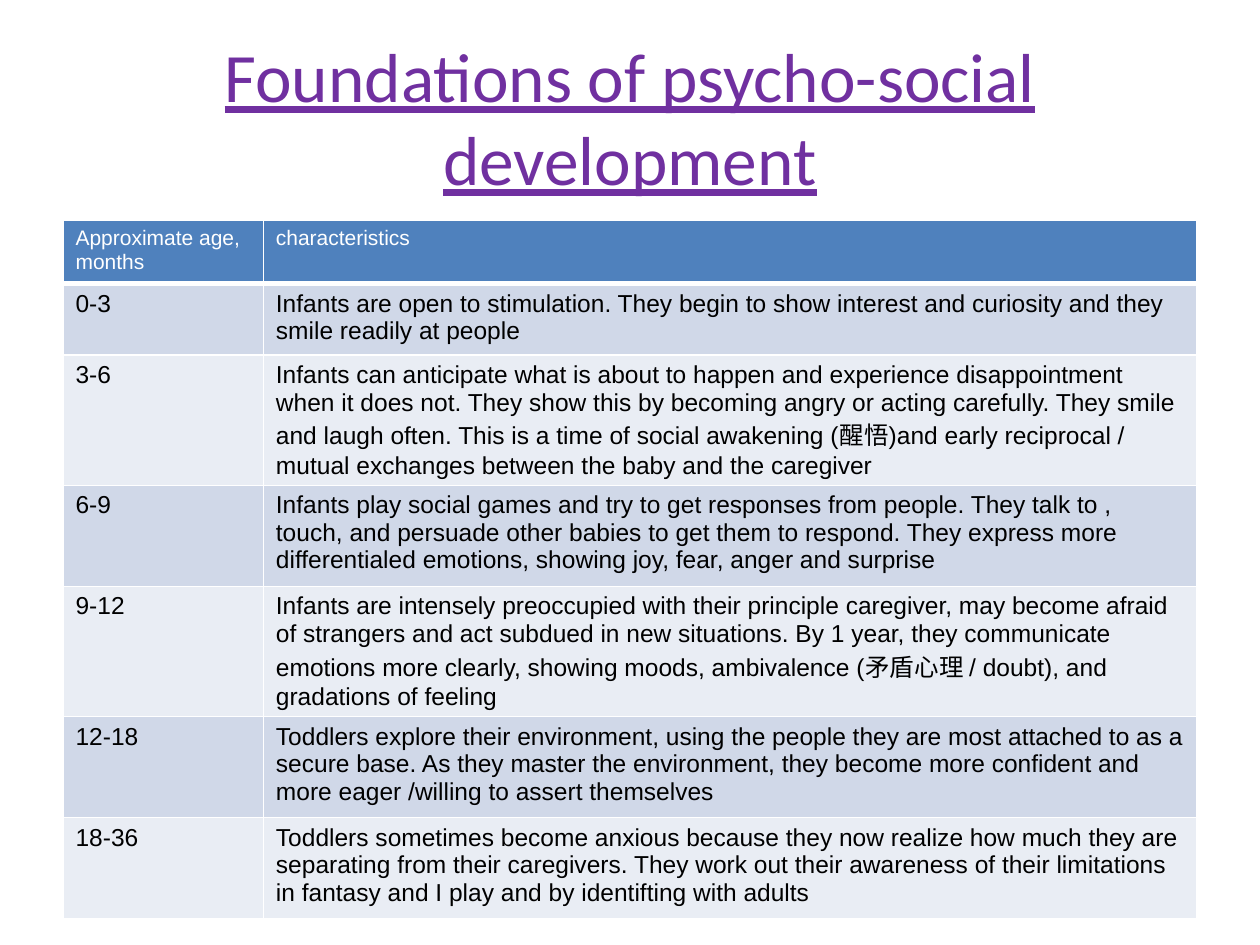
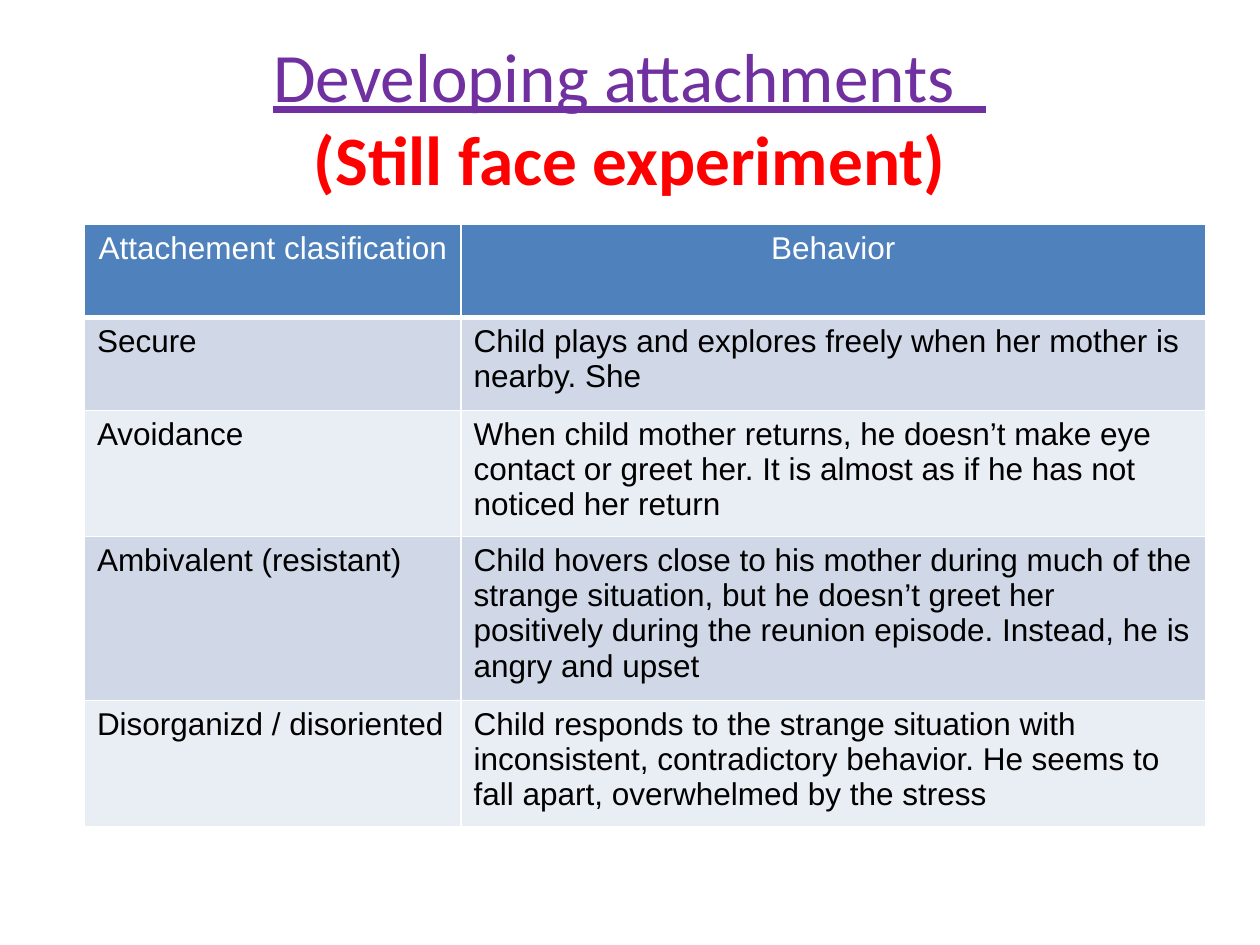
import lxml.etree
import pptx
import pptx.dml.color
import pptx.enum.text
import pptx.oxml.ns
import pptx.util

Pt = pptx.util.Pt
ALIGN = pptx.enum.text.PP_ALIGN

COLORS = {
    "title": "7030A0",
    "accent": "FF0000",
    "header": "4F81BD",
    "band_dark": "D0D8E8",
    "band_light": "E9EDF4",
    "white": "FFFFFF",
    "black": "000000",
}


class Deck:
    """Holds the shared style and the current slide."""

    title_font, title_size = "Calibri", 39.6
    table_font = "Arial"

    def __init__(self):
        self.presentation = pptx.Presentation()
        self.presentation.slide_width = Pt(720)
        self.presentation.slide_height = Pt(540)
        self.slide = None

    def color(self, name):
        return pptx.dml.color.RGBColor.from_string(COLORS[name])

    def add_slide(self):
        self.slide = self.presentation.slides.add_slide(self.presentation.slide_layouts[6])

    def title(self, *lines):
        """Each line is a list of (text, color, bold, underline) runs."""
        box = self.slide.shapes.add_textbox(Pt(36), Pt(21.6), Pt(648), Pt(90))
        frame = box.text_frame
        frame.word_wrap = True
        frame.vertical_anchor = pptx.enum.text.MSO_ANCHOR.MIDDLE
        paragraph = frame.paragraphs[0]
        paragraph.alignment = ALIGN.CENTER
        paragraph.font.name = self.title_font
        paragraph.font.size = Pt(self.title_size)
        for index, line in enumerate(lines):
            if index:
                paragraph.add_line_break()
            for text, color, bold, underline in line:
                run = paragraph.add_run()
                run.text = text
                font = run.font
                font.name, font.size = self.title_font, Pt(self.title_size)
                font.bold, font.underline = bold, underline
                font.color.rgb = self.color(color)

    def border(self, cell, side, width):
        properties = cell._tc.get_or_add_tcPr()
        line = lxml.etree.SubElement(
            properties, pptx.oxml.ns.qn("a:ln" + side), w=str(Pt(width)))
        fill = lxml.etree.SubElement(line, pptx.oxml.ns.qn("a:solidFill"))
        lxml.etree.SubElement(fill, pptx.oxml.ns.qn("a:srgbClr"), val=COLORS["white"])

    def cell(self, cell, text, fill, color, size, alignment, bottom):
        for side, width in (("L", 1), ("R", 1), ("T", 1), ("B", bottom)):
            self.border(cell, side, width)
        cell.fill.solid()
        cell.fill.fore_color.rgb = self.color(fill)
        cell.text = text
        paragraph = cell.text_frame.paragraphs[0]
        paragraph.alignment = alignment
        font = paragraph.runs[0].font
        font.name, font.size, font.bold = self.table_font, Pt(size), False
        font.color.rgb = self.color(color)

    def table(self, left, top, widths, row_height, rows, header_size, body_size, header_alignment):
        table = self.slide.shapes.add_table(
            len(rows), len(widths), Pt(left), Pt(top),
            Pt(sum(widths)), Pt(row_height * len(rows))).table
        for column, width in zip(table.columns, widths):
            column.width = Pt(width)
        for row_index, row in enumerate(rows):
            if row_index == 0:
                style = ("header", "white", header_size, header_alignment, 3)
            else:
                band = "band_dark" if row_index % 2 else "band_light"
                style = (band, "black", body_size, ALIGN.LEFT, 1)
            for column_index, text in enumerate(row):
                self.cell(table.cell(row_index, column_index), text, *style)


AGE_ROWS = [
    ("Approximate age, months", "characteristics"),
    ("0-3", "Infants are open to stimulation. They begin to show interest and curiosity "
            "and they smile readily at people"),
    ("3-6", "Infants can anticipate what is about to happen and experience disappointment "
            "when it does not. They show this by becoming angry or acting carefully. They "
            "smile and laugh often. This is a time of social awakening (醒悟)and early "
            "reciprocal / mutual exchanges between the baby and the caregiver"),
    ("6-9", "Infants play social games and try to get responses from people. They talk to , "
            "touch, and persuade other babies to get them to respond. They express more "
            "differentialed emotions, showing joy, fear, anger and surprise"),
    ("9-12", "Infants are intensely preoccupied with their principle caregiver, may become "
             "afraid of strangers and act subdued in new situations. By 1 year, they "
             "communicate emotions more clearly, showing moods, ambivalence (矛盾心理 / doubt), "
             "and gradations of feeling"),
    ("12-18", "Toddlers explore their environment, using the people they are most attached "
              "to as a secure base. As they master the environment, they become more "
              "confident and more eager /willing to assert themselves"),
    ("18-36", "Toddlers sometimes become anxious because they now realize how much they are "
              "separating from their caregivers. They work out their awareness of their "
              "limitations in fantasy and I play and by identifting with adults"),
]

ATTACHMENT_ROWS = [
    ("Attachement clasification", "Behavior"),
    ("Secure", "Child plays and explores freely when her mother is nearby. She"),
    ("Avoidance", "When child mother returns, he doesn’t make eye contact or greet her. "
                  "It is almost as if he has not noticed her return"),
    ("Ambivalent (resistant)", "Child hovers close to his mother during much of the strange "
                               "situation, but he doesn’t greet her positively during the "
                               "reunion episode. Instead, he is angry and upset"),
    ("Disorganizd / disoriented", "Child responds to the strange situation with inconsistent, "
                                  "contradictory behavior. He seems to fall apart, "
                                  "overwhelmed by the stress"),
]


def main():
    deck = Deck()

    # Psycho-social development by age
    deck.add_slide()
    deck.title([("Foundations of psycho-social development", "title", False, True)])
    deck.table(36, 126, (114.5, 533.5), 29.2, AGE_ROWS, 12, 14, ALIGN.LEFT)

    # Attachment types
    deck.add_slide()
    deck.title(
        [("Developing attachments ", "title", False, True), (" ", "title", True, True)],
        [("(Still face experiment)", "accent", True, False)])
    deck.table(48.25, 128.2, (215.25, 425.5), 53.2, ATTACHMENT_ROWS, 18, 18, ALIGN.CENTER)

    deck.presentation.save("out.pptx")


if __name__ == "__main__":
    main()
